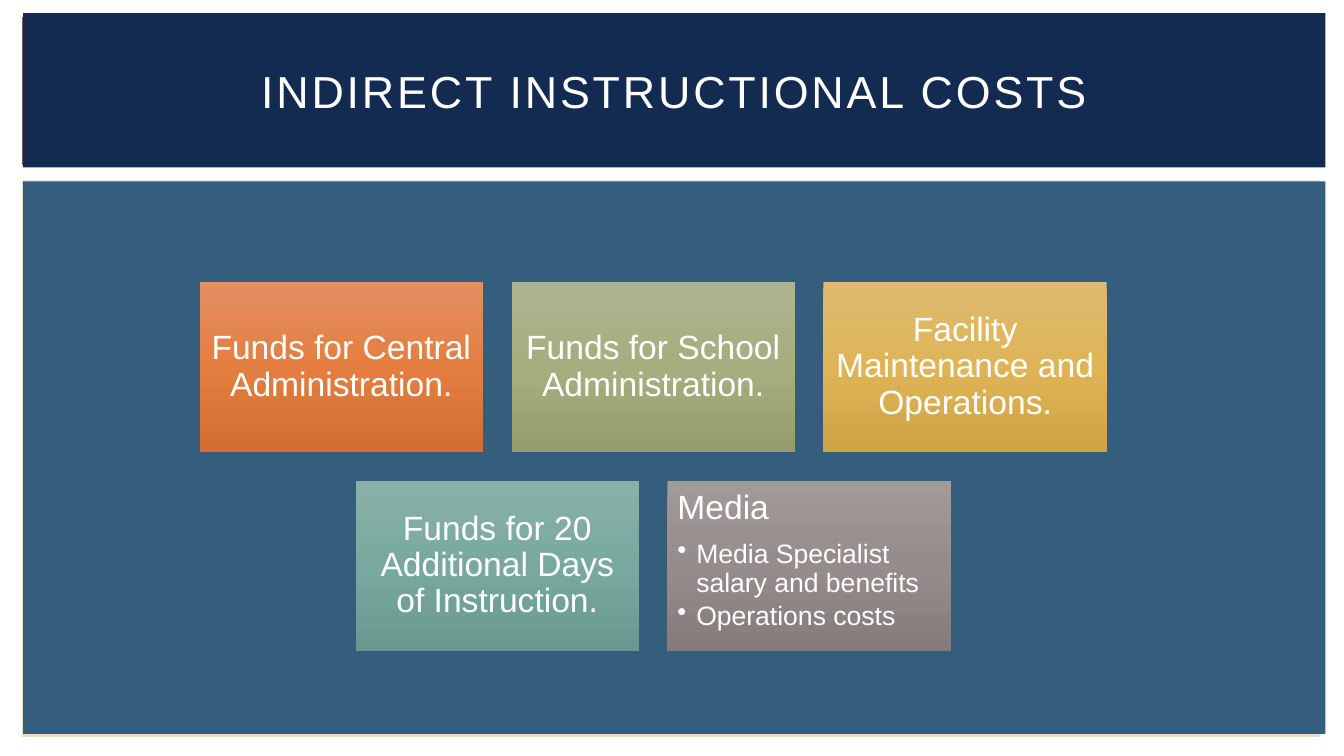
import copy

import pptx
import pptx.dml.color
import pptx.enum.shapes
import pptx.enum.text
import pptx.oxml
import pptx.oxml.ns
import pptx.util

Pt = pptx.util.Pt
RGBColor = pptx.dml.color.RGBColor
ALIGN = pptx.enum.text.PP_ALIGN
ANCHOR = pptx.enum.text.MSO_ANCHOR

WHITE = RGBColor(0xFF, 0xFF, 0xFF)
SAND = RGBColor(0xEB, 0xDD, 0xC3)
BROWN = RGBColor(0x77, 0x5F, 0x55)
STEEL = RGBColor(0x35, 0x5D, 0x7E)
NAVY = RGBColor(0x13, 0x2B, 0x51)

# Top, middle and bottom colour of each card
ORANGE = RGBColor(0xE2, 0x8F, 0x63), RGBColor(0xE4, 0x7E, 0x40), RGBColor(0xD4, 0x6E, 0x30)
OLIVE = RGBColor(0xAF, 0xB4, 0x90), RGBColor(0xA6, 0xAD, 0x7F), RGBColor(0x96, 0x9C, 0x6E)
GOLD = RGBColor(0xDD, 0xBB, 0x72), RGBColor(0xDE, 0xB4, 0x56), RGBColor(0xCD, 0xA3, 0x45)
TEAL = RGBColor(0x8A, 0xB1, 0xA8), RGBColor(0x79, 0xA9, 0x9E), RGBColor(0x69, 0x99, 0x8E)
TAUPE = RGBColor(0xA2, 0x99, 0x99), RGBColor(0x96, 0x8C, 0x8C), RGBColor(0x86, 0x7B, 0x7B)


class SlideBuilder:
    font = "Arial"
    text_color = WHITE
    title_size, card_size, bullet_size = 32, 24, 19
    card_inset = 7.2
    bullet_indent = 13.5

    def __init__(self, slide):
        self.slide = slide

    def panel(self, left, top, width, height, color=None):
        panel = self.slide.shapes.add_shape(
            pptx.enum.shapes.MSO_SHAPE.RECTANGLE, Pt(left), Pt(top), Pt(width), Pt(height))
        panel.shadow.inherit = False
        panel.line.fill.background()
        if color is not None:
            panel.fill.solid()
            panel.fill.fore_color.rgb = color
        return panel

    def style(self, paragraph, size, align):
        paragraph.alignment = align
        for run in paragraph.runs:
            run.font.name = self.font
            run.font.size = Pt(size)
            run.font.color.rgb = self.text_color

    def title(self, text, left, top, width, height, color):
        frame = self.panel(left, top, width, height, color).text_frame
        frame.text = text
        frame.vertical_anchor = ANCHOR.MIDDLE
        heading = frame.paragraphs[0]
        self.style(heading, self.title_size, ALIGN.CENTER)
        heading.runs[0].font._element.set("spc", "200")

    def gradient(self, shape, colors):
        shape.fill.gradient()
        shape.fill.gradient_angle = 270
        stop_list = shape._element.spPr.find(".//" + pptx.oxml.ns.qn("a:gsLst"))
        stop_list.insert(1, copy.deepcopy(stop_list[0]))
        for index, (stop, color) in enumerate(zip(shape.fill.gradient_stops, colors)):
            stop.position = index / 2
            stop.color.rgb = color

    def bullet(self, paragraph):
        properties = paragraph._element.get_or_add_pPr()
        properties.set("marL", str(Pt(self.bullet_indent)))
        properties.set("indent", str(-Pt(self.bullet_indent)))
        properties.append(pptx.oxml.parse_xml(
            f'<a:buChar {pptx.oxml.ns.nsdecls("a")} char="•"/>'))

    def card(self, left, top, width, height, colors, heading, bullets=()):
        card = self.panel(left, top, width, height)
        self.gradient(card, colors)
        frame = card.text_frame
        frame.word_wrap = True
        frame.margin_left = frame.margin_right = Pt(self.card_inset)
        frame.margin_top = frame.margin_bottom = Pt(self.card_inset)
        frame.vertical_anchor = ANCHOR.TOP if bullets else ANCHOR.MIDDLE
        frame.text = "\n".join([heading, *bullets])
        for index, paragraph in enumerate(frame.paragraphs):
            paragraph.line_spacing = 0.9
            paragraph.space_after = Pt(3.3 if index else 9.7)
            self.style(paragraph, self.bullet_size if index else self.card_size,
                       ALIGN.LEFT if bullets else ALIGN.CENTER)
            if index:
                paragraph.level = 1
                self.bullet(paragraph)


def main():
    presentation = pptx.Presentation()
    presentation.slide_width, presentation.slide_height = Pt(960), Pt(540)
    builder = SlideBuilder(presentation.slides.add_slide(presentation.slide_layouts[6]))

    # Backdrop panels and title band
    builder.panel(15.8, 128.9, 927.4, 397.4, SAND)
    builder.panel(15.8, 12.2, 925.2, 105.8, BROWN)
    builder.panel(16.5, 129.6, 930.2, 394.6, STEEL)
    builder.title("INDIRECT INSTRUCTIONAL COSTS", 16.5, 9.4, 930.2, 110.2, NAVY)

    # Cost cards: three above, two centred below
    card_width, card_height, gap = 202.4, 121.5, 20.4
    grid_left, grid_top = 142.6, 201.4
    rows = [
        [(ORANGE, "Funds for Central Administration."),
         (OLIVE, "Funds for School Administration."),
         (GOLD, "Facility Maintenance and Operations.")],
        [(TEAL, "Funds for 20 Additional Days of Instruction."),
         (TAUPE, "Media", ["Media Specialist salary and benefits", "Operations costs"])],
    ]
    pitch = card_width + gap
    for row, cards in enumerate(rows):
        row_left = grid_left + (len(rows[0]) - len(cards)) * pitch / 2
        for column, content in enumerate(cards):
            builder.card(row_left + column * pitch, grid_top + row * (card_height + gap),
                         card_width, card_height, *content)

    presentation.save("out.pptx")


if __name__ == "__main__":
    main()
